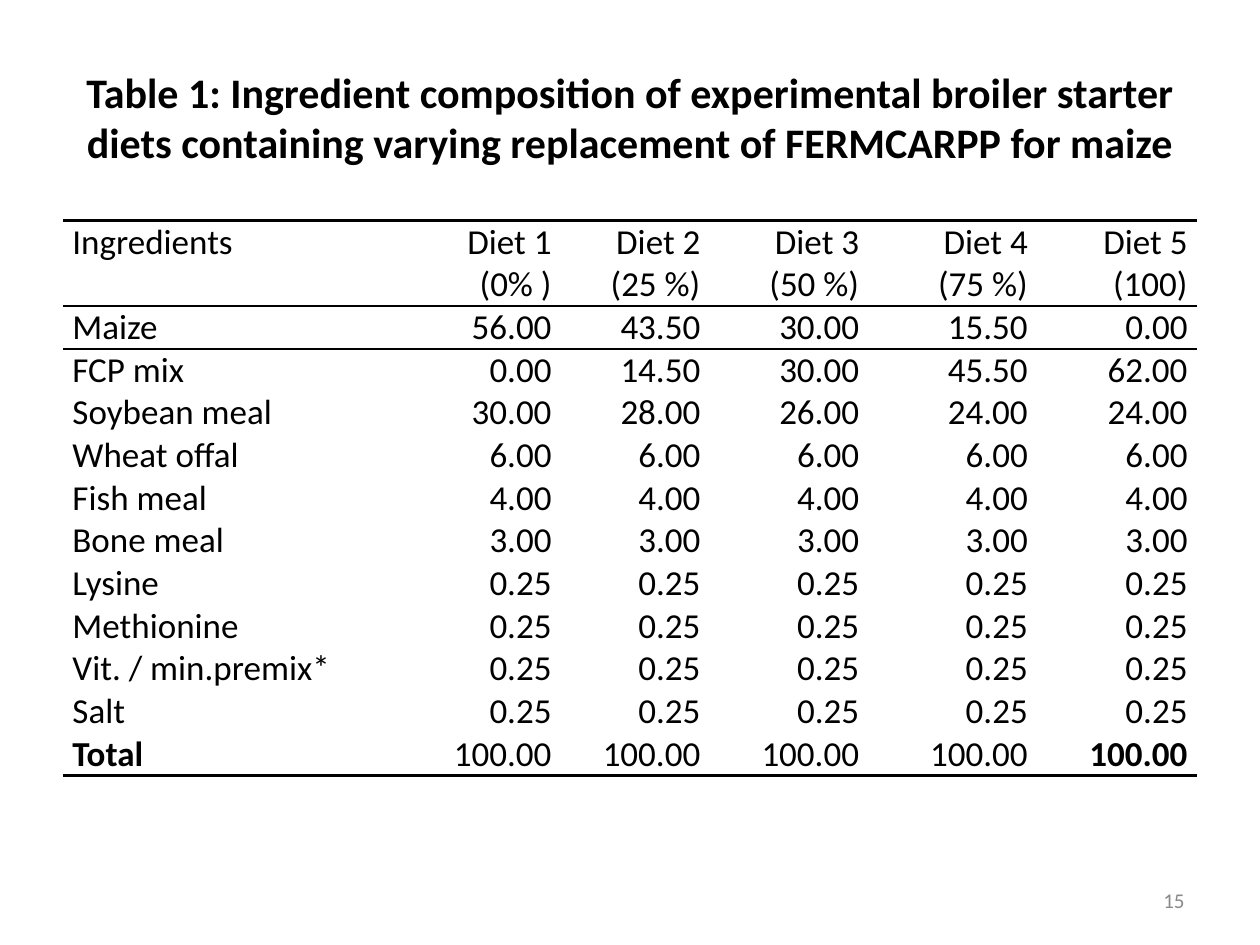
from lxml.etree import SubElement
from pptx import Presentation
from pptx.dml.color import RGBColor
from pptx.enum.text import MSO_ANCHOR as Anchor, PP_ALIGN as Align
from pptx.oxml.ns import qn
from pptx.util import Cm, Pt

BLACK = RGBColor(0x00, 0x00, 0x00)
WHITE = RGBColor(0xFF, 0xFF, 0xFF)
GREY = RGBColor(0x89, 0x89, 0x89)


def add_span(para, text, size, color=BLACK, bold=False):
    span = para.add_run()
    span.text = text
    font = span.font
    font.name, font.size, font.bold = "Calibri", Pt(size), bold
    font.color.rgb = color


def add_border(cell, side, points):
    """Draw one cell edge, or clear it when points is 0."""
    line = SubElement(cell._tc.get_or_add_tcPr(), qn(f"a:ln{side}"), w=str(Pt(points)))
    if points:
        fill = SubElement(line, qn("a:solidFill"))
        SubElement(fill, qn("a:srgbClr"), val=str(BLACK))
    else:
        SubElement(line, qn("a:noFill"))


deck = Presentation()
deck.slide_width, deck.slide_height = Cm(25.4), Cm(19.05)
page = deck.slides.add_slide(deck.slide_layouts[6])

# Title and page number
title = ("Table 1: Ingredient composition of experimental broiler starter "
         "diets containing varying replacement of FERMCARPP for maize")
texts = [
    (title, 1.27, 0.76, 22.86, 3.18, Align.CENTER, 24, BLACK, True),
    ("15", 18.2, 17.65, 5.93, 1.01, Align.RIGHT, 12, GREY, False),
]
for text, left, top, width, height, align, size, color, bold in texts:
    box = page.shapes.add_textbox(Cm(left), Cm(top), Cm(width), Cm(height))
    frame = box.text_frame
    frame.word_wrap = True
    frame.vertical_anchor = Anchor.MIDDLE
    para = frame.paragraphs[0]
    para.alignment = align
    add_span(para, text, size, color, bold)

# Table content
rows = [
    ["Ingredients", "Diet 1\n(0% )", "Diet 2\n(25 %)", "Diet 3\n(50 %)",
     "Diet 4\n(75 %)", "Diet 5\n(100)"],
    ["Maize", "56.00", "43.50", "30.00", "15.50", "0.00"],
    ["FCP mix", "0.00", "14.50", "30.00", "45.50", "62.00"],
    ["Soybean meal", "30.00", "28.00", "26.00", "24.00", "24.00"],
]
constant_rows = [
    ("Wheat offal", "6.00"), ("Fish meal", "4.00"), ("Bone meal", "3.00"),
    ("Lysine", "0.25"), ("Methionine", "0.25"), ("Vit. / min.premix*", "0.25"),
    ("Salt", "0.25"), ("Total", "100.00"),
]
rows += [[name] + [value] * 5 for name, value in constant_rows]
last_row = len(rows) - 1
bold_cells = {(last_row, 0), (last_row, 5)}

# Horizontal rules: row edge -> line width in points
rules = {0: 2, 1: 1, 2: 1.5, len(rows): 2}
column_widths = [7.04, 3, 3, 3.2, 3.4, 3.22]
row_height = 0.86

table = page.shapes.add_table(
    len(rows), len(column_widths), Cm(1.27), Cm(4.45),
    Cm(sum(column_widths)), Cm(row_height * (len(rows) + 1))).table
table.first_row = table.horz_banding = False
for column, width in zip(table.columns, column_widths):
    column.width = Cm(width)

for r, values in enumerate(rows):
    table.rows[r].height = Cm(row_height * (2 if r == 0 else 1))
    for c, value in enumerate(values):
        cell = table.cell(r, c)
        cell.margin_left = cell.margin_right = Cm(0.19)
        cell.margin_top = cell.margin_bottom = 0
        for side, points in (("L", 0), ("R", 0), ("T", rules.get(r, 0)),
                             ("B", rules.get(r + 1, 0))):
            add_border(cell, side, points)
        cell.fill.solid()
        cell.fill.fore_color.rgb = WHITE
        frame = cell.text_frame
        for i, text in enumerate(value.split("\n")):
            para = frame.add_paragraph() if i else frame.paragraphs[0]
            para.alignment = Align.RIGHT if c else Align.JUSTIFY
            add_span(para, text, 20, bold=(r, c) in bold_cells)

deck.save("out.pptx")
